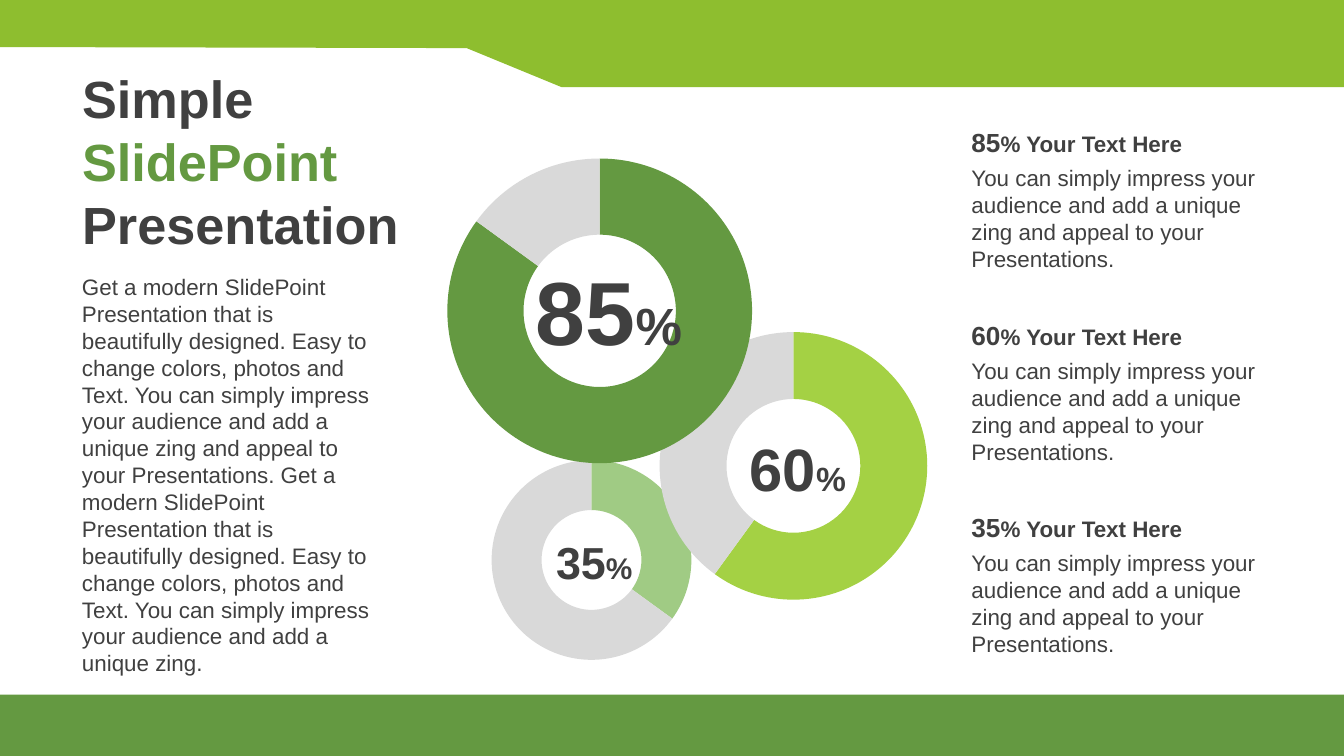
from lxml import etree
from pptx import Presentation
from pptx import util as u
from pptx.chart import data as cd
from pptx.dml import color as dc
from pptx.enum import chart as ch, shapes, text
from pptx.oxml import ns, parse_xml

HUES = {"lime": "8EBE2F", "green": "649941", "pale": "A0CB84",
        "bright": "A4D144", "grey": "D9D9D9", "ink": "404040"}
BLURB = ("You can simply impress your audience and add a unique zing "
         "and appeal to your Presentations.")
STORY = ("Get a modern SlidePoint Presentation that is beautifully designed. "
         "Easy to change colors, photos and Text. " + BLURB + " "
         "Get a modern SlidePoint Presentation that is beautifully designed. "
         "Easy to change colors, photos and Text. You can simply impress "
         "your audience and add a unique zing.")
FRAME = {"vertical_anchor": text.MSO_ANCHOR.MIDDLE,
         "auto_size": text.MSO_AUTO_SIZE.SHAPE_TO_FIT_TEXT}
PLOT = {"x": 0.024, "y": 0.041, "w": 0.962, "h": 0.919}


def rgb(hue):
    """Return the colour of a named hue."""
    return dc.RGBColor.from_string(HUES[hue])


def cm(*vals):
    """Turn numbers into centimetre lengths."""
    return [u.Cm(val) for val in vals]


def style(obj, vals):
    """Set attributes of an object from a dict."""
    for key, val in vals.items():
        setattr(obj, key, val)


def paint(shape, hue):
    """Give a shape a flat fill with no line or shadow."""
    shape.fill.solid()
    shape.fill.fore_color.rgb = rgb(hue)
    shape.line.fill.background()
    shape.shadow.inherit = False


def write(shape, paras, bold=False, wrap=True, pitch=None):
    """Fill a shape with paragraphs of (words, size, hue) runs."""
    frame = shape.text_frame
    style(frame, FRAME | {"word_wrap": wrap})
    for num, runs in enumerate(paras):
        para = frame.add_paragraph() if num else frame.paragraphs[0]
        para.alignment = text.PP_ALIGN.LEFT
        if pitch:
            para.line_spacing = u.Pt(pitch)
        for words, size, hue in runs:
            run = para.add_run()
            run.text = words
            style(run.font, {"name": "Arial", "size": u.Pt(size), "bold": bold})
            run.font.color.rgb = rgb(hue)


def bands(slide, box):
    """Draw the stepped top band and the bottom bar."""
    left, top, wide, high = box
    right = left + wide
    pts = [(right, top - 0.08), (right, top + 1.65), (left + 10.62, top + 1.65),
           (left + 8.82, top + 0.91), (left, top + 0.89)]
    pen = slide.shapes.build_freeform(*cm(left, top - 0.08), scale=1.0)
    pen.add_line_segments([cm(*pt) for pt in pts], close=True)
    paint(pen.convert_to_shape(), "lime")
    bar = slide.shapes.add_shape(
        shapes.MSO_SHAPE.RECTANGLE, *cm(left, top + high - 1.16, wide, 1.16))
    paint(bar, "green")


def intro(slide, box):
    """Place the title and the story below it."""
    left, top, wide, high = box
    title = slide.shapes.title
    style(title, dict(zip(("left", "top", "width", "height"),
                          cm(left, top, wide, 3.84))))
    write(title, [[("Simple", 28, "ink")],
                  [("SlidePoint", 28, "green"), (" Presentation", 28, "ink")]],
          bold=True, pitch=33.6)
    story = slide.shapes.add_textbox(*cm(left, top + 3.88, 6.05, high - 3.88))
    write(story, [[(STORY, 12, "ink")]], pitch=14.4)


def ring(slide, box, share, hue, tag, sizes):
    """Draw a doughnut with its percentage in the hole."""
    left, top, wide, high = box
    data = cd.CategoryChartData()
    data.categories = ["1", "2", "3", "4"]
    data.add_series("Series 1", (share, 100 - share, 0, 0))
    chart = slide.shapes.add_chart(
        ch.XL_CHART_TYPE.DOUGHNUT, *cm(left, top, wide, high), data).chart
    style(chart, {"has_legend": False, "has_title": False})
    style(chart.font, {"name": "Arial", "size": u.Pt(18)})
    chart.font.color.rgb = dc.RGBColor(0, 0, 0)
    plot = chart.plots[0]
    plot.vary_by_categories = True
    for num, name in enumerate((hue, "grey", "green", "bright")):
        look = plot.series[0].points[num].format
        look.fill.solid()
        look.fill.fore_color.rgb = rgb(name)
        look.line.fill.background()
    shape_plot(chart.element)
    dx, dy, tw, th = tag
    label = slide.shapes.add_textbox(*cm(left + dx, top + dy, tw, th))
    write(label, [[(str(share), sizes[0], "ink"), ("%", sizes[1], "ink")]],
          bold=True, wrap=False)


def shape_plot(root):
    """Set hole size, plot layout and a clear chart background."""
    for hole in root.iter(ns.qn("c:holeSize")):
        hole.set("val", "80")
    area = next(root.iter(ns.qn("c:plotArea")))
    for old in area.findall(ns.qn("c:layout")):
        area.remove(old)
    lay = etree.Element(ns.qn("c:layout"))
    man = etree.SubElement(lay, ns.qn("c:manualLayout"))
    vals = {"layoutTarget": "inner", "xMode": "edge", "yMode": "edge"} | PLOT
    for key, val in vals.items():
        etree.SubElement(man, ns.qn("c:" + key)).set("val", str(val))
    area.insert(0, lay)
    clear = parse_xml("<c:spPr %s><a:noFill/><a:ln><a:noFill/></a:ln></c:spPr>"
                      % ns.nsdecls("c", "a"))
    root.find(ns.qn("c:chart")).addnext(clear)


def note(slide, box, share):
    """Place a grouped heading and blurb."""
    left, top, wide, high = box
    group = slide.shapes.add_group_shape()
    body = group.shapes.add_textbox(*cm(left, top + 0.71, wide, high - 0.71))
    write(body, [[(BLURB, 12, "ink")]], pitch=14.4)
    head = group.shapes.add_textbox(*cm(left, top, wide, 0.86))
    write(head, [[(str(share), 14, "ink"), ("% Your Text Here", 12, "ink")]],
          bold=True)


def main():
    """Build the slide and save it."""
    deck = Presentation()
    style(deck, {"slide_width": u.Cm(25.4), "slide_height": u.Cm(14.29)})
    slide = deck.slides.add_slide(deck.slide_layouts[5])
    bands(slide, (0, 0, 25.4, 14.29))
    intro(slide, (1.3, 1.12, 7.19, 11.83))
    rings = [
        ((9.19, 8.53, 3.94, 4.11), 35, "pale", (1.07, 1.45, 1.98, 1.27), (24, 16)),
        ((12.34, 6.05, 5.26, 5.51), 60, "bright", (1.58, 1.98, 2.34, 1.63), (32, 18)),
        ((8.31, 2.74, 5.99, 6.27), 85, "green", (1.57, 1.96, 3.3, 2.31), (48, 28)),
    ]
    for args in rings:
        ring(slide, *args)
    for num, share in enumerate((85, 60, 35)):
        note(slide, (18.11, 2.26 + num * 3.64, 6.38, 3.02), share)
    deck.save("out.pptx")


if __name__ == "__main__":
    main()
